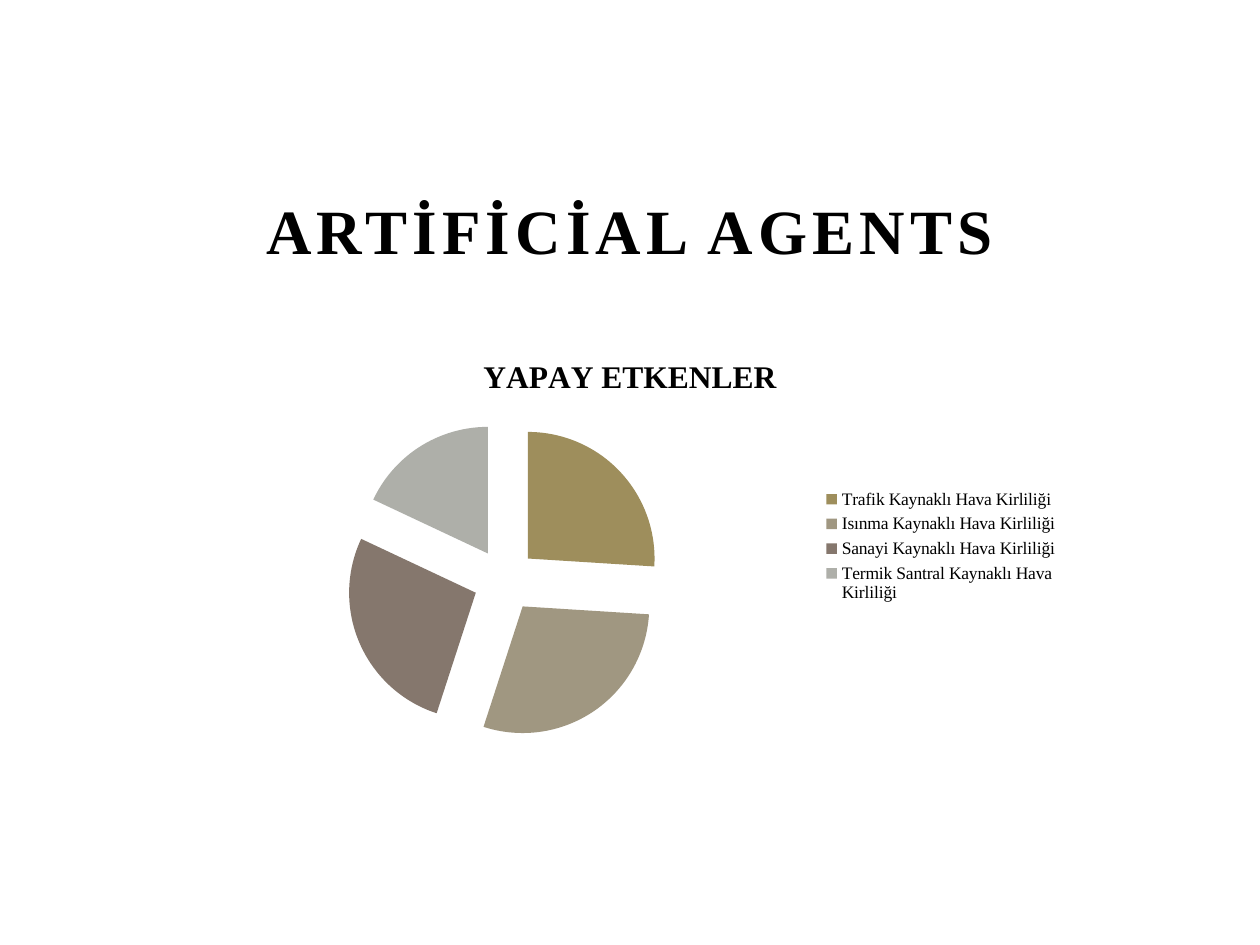
from pptx import Presentation
from pptx.chart.data import CategoryChartData as ChartData
from pptx.dml.color import RGBColor
from pptx.enum.chart import XL_CHART_TYPE as Kind, XL_LEGEND_POSITION as Side
from pptx.enum.text import MSO_ANCHOR as Anchor, PP_ALIGN as Align
from pptx.oxml import parse_xml
from pptx.oxml.ns import nsdecls, qn
from pptx.util import Inches, Pt


def rgb(code):
    return RGBColor.from_string(code)


class Board:
    face = "Times New Roman"
    ink = "000000"

    def __init__(self, slide):
        self.slide = slide

    def style(self, font, size, bold=False):
        font.name = self.face
        font.size = Pt(size)
        font.bold = bold
        font.color.rgb = rgb(self.ink)

    def title(self, text, x, y, w, h):
        box = self.slide.shapes.add_textbox(Inches(x), Inches(y), Inches(w), Inches(h))
        frame = box.text_frame
        frame.word_wrap = True
        frame.vertical_anchor = Anchor.BOTTOM
        frame.text = text
        para = frame.paragraphs[0]
        para.alignment = Align.CENTER
        run = para.runs[0]
        self.style(run.font, 36, True)
        # Letter spacing in hundredths of a point
        run.font._element.set("spc", "300")

    def pie(self, name, parts, gap, x, y, w, h):
        data = ChartData()
        data.categories = [label for label, _, _ in parts]
        data.add_series(name, [value for _, value, _ in parts])
        chart = self.slide.shapes.add_chart(
            Kind.PIE, Inches(x), Inches(y), Inches(w), Inches(h), data).chart
        self.style(chart.font, 10)

        # Heading and legend
        chart.has_title = True
        head = chart.chart_title.text_frame
        head.text = name
        self.style(head.paragraphs[0].runs[0].font, 18, True)
        chart.chart_title.include_in_layout = False
        chart.has_legend = True
        chart.legend.position = Side.RIGHT
        chart.legend.include_in_layout = False

        # Slices, pulled apart
        plot = chart.plots[0]
        plot.vary_by_categories = True
        series = plot.series[0]
        for i, (_, _, color) in enumerate(parts):
            fill = series.points[i].format.fill
            fill.solid()
            fill.fore_color.rgb = rgb(color)
        ser = series._element
        slices = ser.findall(qn("c:dPt"))
        for node in [slices[0]] + [s.find(qn("c:spPr")) for s in slices]:
            node.addprevious(parse_xml(f'<c:explosion {nsdecls("c")} val="{gap}"/>'))


def main():
    deck = Presentation()
    deck.slide_width, deck.slide_height = Inches(10), Inches(7.5)
    board = Board(deck.slides.add_slide(deck.slide_layouts[6]))

    # Title
    board.title("ARTİFİCİAL AGENTS", 1.5, 1.42, 7, 0.75)

    # Sources of air pollution
    parts = [
        ("Trafik Kaynaklı Hava Kirliliği", 26, "9E8E5C"),
        ("Isınma Kaynaklı Hava Kirliliği", 29, "A09781"),
        ("Sanayi Kaynaklı Hava Kirliliği", 27, "85776D"),
        ("Termik Santral Kaynaklı Hava Kirliliği", 18, "AEAFA9"),
    ]
    board.pie("YAPAY ETKENLER", parts, 25, 1.5, 2.67, 7, 3.33)

    deck.save("out.pptx")


if __name__ == "__main__":
    main()
